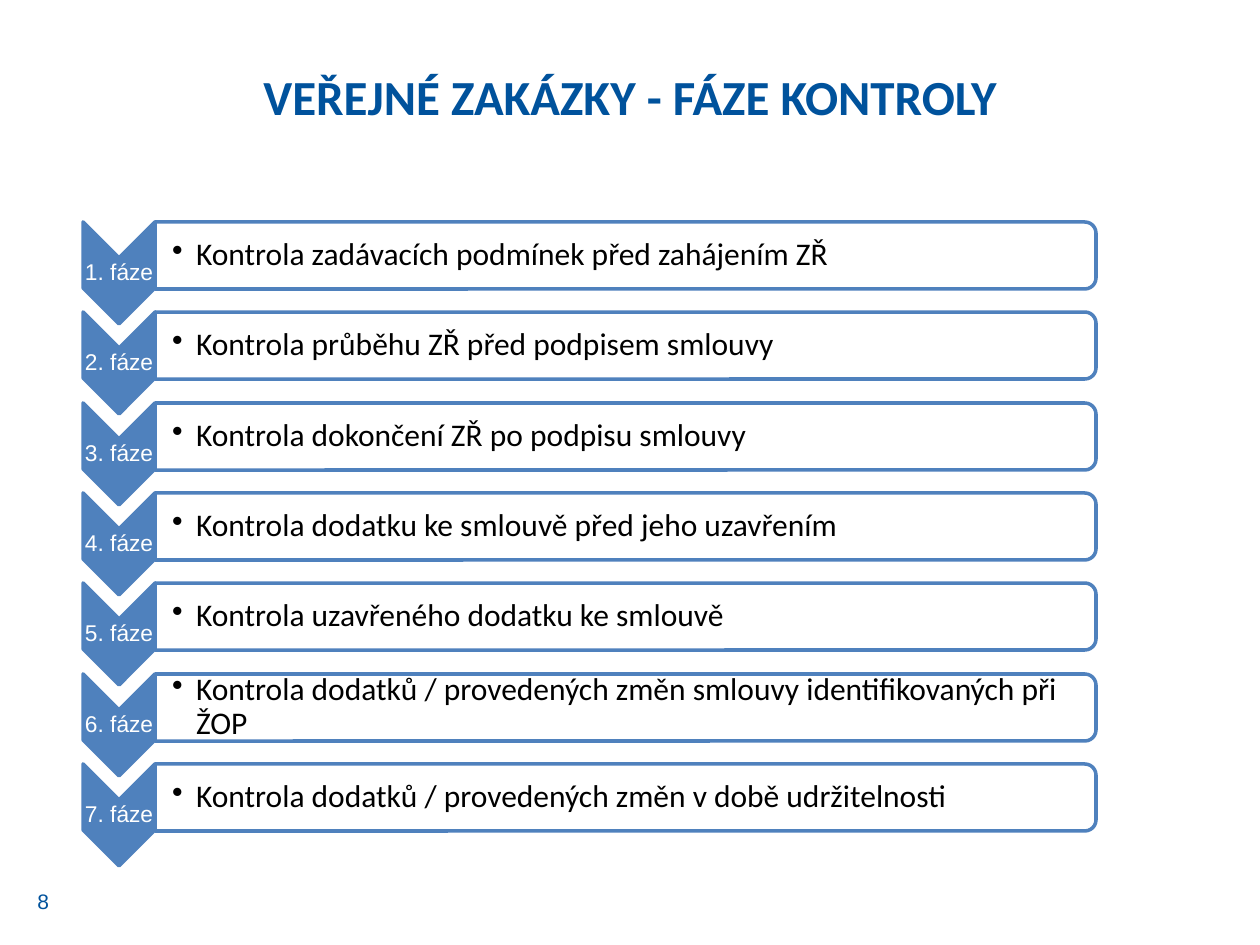
from dataclasses import dataclass

from lxml.etree import SubElement
from pptx import Presentation
from pptx.dml.color import RGBColor
from pptx.enum.shapes import MSO_SHAPE
from pptx.enum.text import MSO_ANCHOR, PP_ALIGN
from pptx.oxml.ns import qn
from pptx.util import Emu, Pt


@dataclass(frozen=True)
class Theme:
    heading: RGBColor = RGBColor(0x00, 0x52, 0x9C)
    accent: RGBColor = RGBColor(0x4F, 0x81, 0xBD)
    white: RGBColor = RGBColor(0xFF, 0xFF, 0xFF)
    black: RGBColor = RGBColor(0x00, 0x00, 0x00)
    title_size: int = 28
    body_size: int = 18
    label_size: int = 13
    number_size: int = 12
    outline: int = 2


theme = Theme()
PX = 914400 / 126


def add_text(box, text, font_name, size, color, anchor=MSO_ANCHOR.MIDDLE, margins=None):
    """Add a text box at box (left, top, width, height in px); return its frame and paragraph."""
    frame = slide.shapes.add_textbox(*(Emu(round(n * PX)) for n in box)).text_frame
    frame.word_wrap = True
    frame.vertical_anchor = anchor
    if margins:
        (frame.margin_left, frame.margin_top,
         frame.margin_right, frame.margin_bottom) = (Emu(round(n * PX)) for n in margins)
    frame.text = text
    paragraph = frame.paragraphs[0]
    font = paragraph.runs[0].font
    font.name, font.size, font.color.rgb = font_name, Pt(size), color
    return frame, paragraph


def add_turned(kind, left, top, width, height, fill):
    """Add a shape turned by 90 degrees that covers the given area in px."""
    area = (left + (width - height) / 2, top + (height - width) / 2, height, width)
    shape = slide.shapes.add_shape(kind, *(Emu(round(n * PX)) for n in area))
    shape.rotation = 90
    shape.shadow.inherit = False
    shape.fill.solid()
    shape.fill.fore_color.rgb = fill
    shape.line.color.rgb = theme.accent
    shape.line.width = Pt(theme.outline)
    return shape


presentation = Presentation()
presentation.slide_width = Emu(round(1260 * PX))
presentation.slide_height = Emu(round(945 * PX))
slide = presentation.slides.add_slide(presentation.slide_layouts[6])

# Page number and title
add_text((25, 876, 69, 50), "8", "Arial", theme.number_size, theme.heading)
_, title = add_text((0, 60, 1260, 105), "VEŘEJNÉ ZAKÁZKY - FÁZE KONTROLY", "Calibri",
                    theme.title_size, theme.heading, MSO_ANCHOR.TOP)
title.alignment = PP_ALIGN.CENTER
title.runs[0].font.bold = True

# Phases of the check
phases = [
    "Kontrola zadávacích podmínek před zahájením ZŘ",
    "Kontrola průběhu ZŘ před podpisem smlouvy",
    "Kontrola dokončení ZŘ po podpisu smlouvy",
    "Kontrola dodatku ke smlouvě před jeho uzavřením",
    "Kontrola uzavřeného dodatku ke smlouvě",
    "Kontrola dodatků / provedených změn smlouvy identifikovaných při ŽOP",
    "Kontrola dodatků / provedených změn v době udržitelnosti",
]
first_top, last_top = 222, 764
chevron_left, chevron_width, chevron_height = 83, 72, 102
panel_left, panel_width, panel_height = 155, 941, 67
bullet_indent = Emu(round(24 * PX))

for index, phase in enumerate(phases):
    top = first_top + round(index * (last_top - first_top) / (len(phases) - 1))

    # Chevron with the phase number
    add_turned(MSO_SHAPE.CHEVRON, chevron_left, top, chevron_width, chevron_height, theme.accent)
    label_frame, label = add_text((chevron_left, top + 36, chevron_width, 30),
                                  f"{index + 1}. fáze", "Arial", theme.label_size,
                                  theme.white, margins=(1, 1, 1, 1))
    label_frame.word_wrap = False
    label.alignment = PP_ALIGN.CENTER
    label.line_spacing = 0.9

    # Panel with the description
    panel = add_turned(MSO_SHAPE.ROUND_2_SAME_RECTANGLE, panel_left, top,
                       panel_width, panel_height, theme.white)
    panel_color = panel.fill._xPr.find(qn("a:solidFill"))[0]
    SubElement(panel_color, qn("a:alpha"), val="90000")
    _, description = add_text((panel_left, top + 4, panel_width - 2, 59), phase, "Calibri",
                              theme.body_size, theme.black, margins=(17, 1, 1, 1))
    description.line_spacing = 0.9
    properties = description._p.get_or_add_pPr()
    properties.set("marL", str(bullet_indent))
    properties.set("indent", str(-bullet_indent))
    SubElement(properties, qn("a:buChar"), char="•")

presentation.save("out.pptx")
